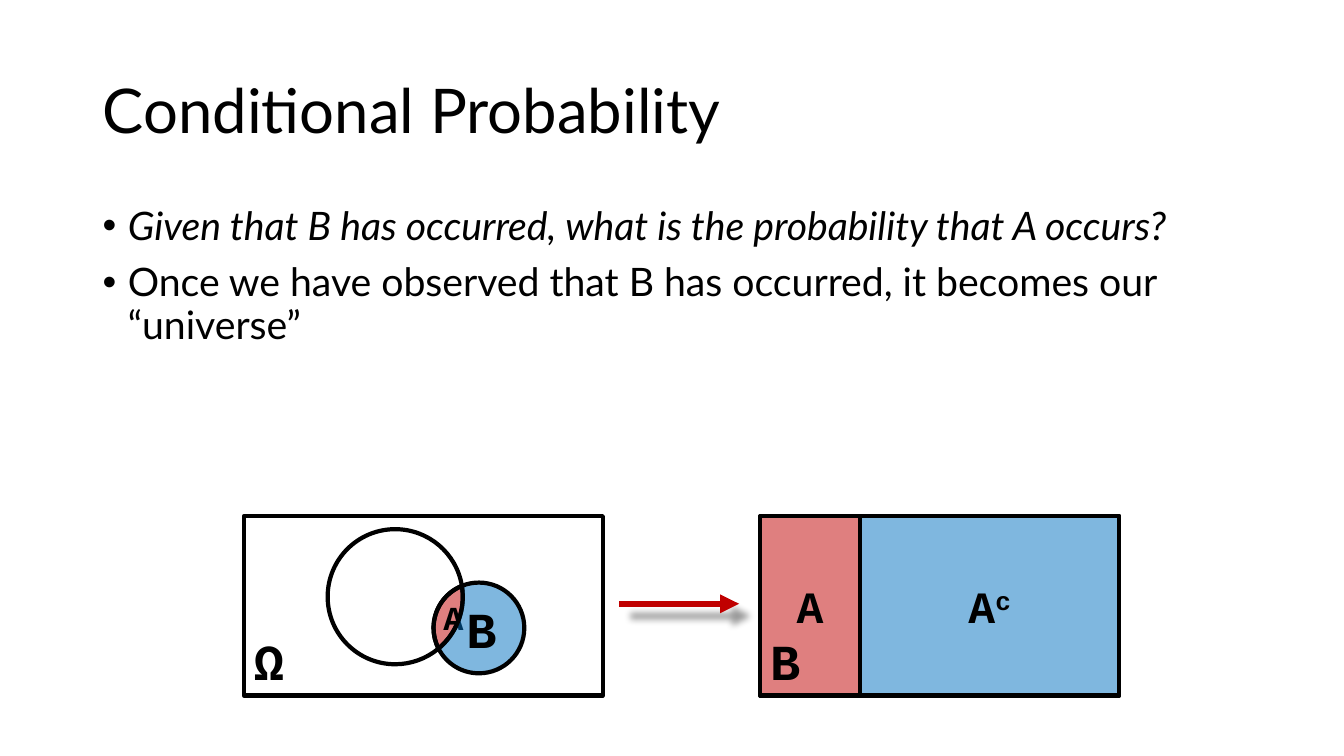
from math import acos, atan2, ceil, cos, floor, hypot, pi, sin, tan

from lxml import etree
from pptx import Presentation
from pptx.dml.color import RGBColor
from pptx.enum.shapes import MSO_CONNECTOR, MSO_SHAPE
from pptx.enum.text import MSO_ANCHOR, MSO_AUTO_SIZE, PP_ALIGN
from pptx.oxml.ns import qn
from pptx.util import Inches, Pt

BLACK = RGBColor(0x00, 0x00, 0x00)
RED = RGBColor(0xC0, 0x00, 0x00)
BLUE = RGBColor(0x00, 0x70, 0xC0)
RECTANGLE = MSO_SHAPE.RECTANGLE
STRAIGHT = MSO_CONNECTOR.STRAIGHT
MIDDLE, BOTTOM, TOP = MSO_ANCHOR.MIDDLE, MSO_ANCHOR.BOTTOM, MSO_ANCHOR.TOP
LEFT, CENTER = PP_ALIGN.LEFT, PP_ALIGN.CENTER
NO_AUTO_SIZE = MSO_AUTO_SIZE.NONE
TITLE_ONLY = 5

BOX_TOP, BOX_WIDTH, BOX_HEIGHT = 5.12, 3.56, 1.78
OMEGA_LEFT, UNIVERSE_LEFT, A_WIDTH = 2.42, 7.54, 0.99
CENTER_A, RADIUS_A = (3.92, 5.92), 0.67
CENTER_B, RADIUS_B = (4.75, 6.23), 0.45


def arc(center, radius, start, end):
    """Return Bezier points of an arc, split where it meets the axes."""
    quarter = pi / 2
    low, high = sorted((start, end))
    cuts = [quarter * k for k in range(floor(low / quarter) + 1, ceil(high / quarter))]
    angles = [low, *cuts, high]
    if start > end:
        angles.reverse()
    points = [(center[0] + radius * cos(start), center[1] + radius * sin(start))]
    for first, last in zip(angles, angles[1:]):
        pull = 4 / 3 * tan((last - first) / 4)
        for angle, shift in ((first, pull), (last, -pull), (last, 0)):
            points.append((center[0] + radius * (cos(angle) - shift * sin(angle)),
                           center[1] + radius * (sin(angle) + shift * cos(angle))))
    return points


def venn_regions():
    """Return the outlines of the overlap, A without B and B without A."""
    across, down = CENTER_B[0] - CENTER_A[0], CENTER_B[1] - CENTER_A[1]
    distance, direction = hypot(across, down), atan2(down, across)
    chord = (RADIUS_A**2 - RADIUS_B**2 + distance**2) / (2 * distance)
    half_a = acos(chord / RADIUS_A)
    half_b = acos((distance - chord) / RADIUS_B)
    upper_a, lower_a = direction - half_a, direction + half_a
    lower_b, upper_b = direction + pi - half_b, direction + pi + half_b
    inner_a = arc(CENTER_A, RADIUS_A, upper_a, lower_a)
    inner_b = arc(CENTER_B, RADIUS_B, lower_b, upper_b)
    outer_a = arc(CENTER_A, RADIUS_A, lower_a, upper_a + 2 * pi)
    outer_b = arc(CENTER_B, RADIUS_B, upper_b, lower_b + 2 * pi)
    return inner_a + inner_b[1:], outer_a + inner_b[-2::-1], outer_b + inner_a[-2::-1]


class SlideBuilder:
    """Hold the fonts and the current slide, and add its elements."""

    text_font = "Lato"
    symbol_font = "Courier New"

    def __init__(self, presentation):
        """Add a title-only slide."""
        self.slide = presentation.slides.add_slide(
            presentation.slide_layouts[TITLE_ONLY])

    def style_paragraph(self, paragraph, size, name, align=LEFT):
        """Set the font and alignment of a paragraph."""
        paragraph.alignment = align
        paragraph.font.name = name
        paragraph.font.size = Pt(size)
        paragraph.font.color.rgb = BLACK

    def title(self, text, left, top, width, height):
        """Place and format the title placeholder."""
        title = self.slide.shapes.title
        title.left, title.top = Inches(left), Inches(top)
        title.width, title.height = Inches(width), Inches(height)
        frame = title.text_frame
        frame.text = text
        frame.auto_size = NO_AUTO_SIZE
        frame.vertical_anchor = MIDDLE
        frame.paragraphs[0].line_spacing = 0.9
        self.style_paragraph(frame.paragraphs[0], 44, self.text_font)

    def bullets(self, items, left, top, width, height):
        """Add a bulleted list of (text, italic) items."""
        frame = self.slide.shapes.add_textbox(
            Inches(left), Inches(top), Inches(width), Inches(height)).text_frame
        frame.word_wrap = True
        frame.vertical_anchor = TOP
        for index, (text, italic) in enumerate(items):
            paragraph = frame.add_paragraph() if index else frame.paragraphs[0]
            paragraph.text = text
            paragraph.line_spacing = 0.9
            paragraph.space_before = Pt(10)
            self.style_paragraph(paragraph, 28, self.text_font)
            paragraph.font.italic = italic
            properties = paragraph._p.get_or_add_pPr()
            properties.set("marL", str(Inches(0.25)))
            properties.set("indent", str(-Inches(0.25)))
            default_font = properties.find(qn("a:defRPr"))
            default_font.addprevious(etree.Element(qn("a:buFont"), typeface="Arial"))
            default_font.addprevious(etree.Element(qn("a:buChar"), char="•"))

    def group(self):
        """Add an empty group and return its shapes."""
        return self.slide.shapes.add_group_shape().shapes

    def style_shape(self, shape, color):
        """Give a shape a black outline and a half-transparent or no fill."""
        shape.shadow.inherit = False
        shape.line.color.rgb = BLACK
        shape.line.width = Pt(3)
        if color is None:
            shape.fill.background()
            return
        shape.fill.solid()
        shape.fill.fore_color.rgb = color
        fill_color = shape._element.spPr.find(qn("a:solidFill"))[0]
        etree.SubElement(fill_color, qn("a:alpha"), val="50000")

    def label(self, shape, text, size, anchor=MIDDLE, align=CENTER, superscript=""):
        """Write a bold label, with an optional superscript, in a shape."""
        frame = shape.text_frame
        frame.word_wrap = True
        frame.vertical_anchor = anchor
        paragraph = frame.paragraphs[0]
        paragraph.text = text
        self.style_paragraph(paragraph, size, self.symbol_font, align)
        paragraph.font.bold = True
        if superscript:
            run = paragraph.add_run()
            run.text = superscript
            run._r.get_or_add_rPr().set("baseline", "30000")

    def box(self, shapes, left, width, color=None):
        """Add a rectangle in the diagram row."""
        shape = shapes.add_shape(RECTANGLE, Inches(left), Inches(BOX_TOP),
                                 Inches(width), Inches(BOX_HEIGHT))
        self.style_shape(shape, color)
        return shape

    def region(self, shapes, points, color=None):
        """Add a closed curved outline through Bezier points in inches."""
        corners = [(Inches(x), Inches(y)) for x, y in points]
        builder = shapes.build_freeform(*corners[0])
        builder.add_line_segments(corners[1:], close=True)
        shape = builder.convert_to_shape()
        lines = list(shape._element.iter(qn("a:lnTo")))
        for index in range(0, len(lines) - 2, 3):
            curve = etree.Element(qn("a:cubicBezTo"))
            lines[index].addprevious(curve)
            for line in lines[index:index + 3]:
                curve.append(line[0])
                line.getparent().remove(line)
        self.style_shape(shape, color)
        return shape

    def arrow(self, left, right, height):
        """Add a horizontal red arrow with a soft shadow."""
        connector = self.slide.shapes.add_connector(
            STRAIGHT, Inches(left), Inches(height), Inches(right), Inches(height))
        connector.line.color.rgb = RED
        connector.line.width = Pt(4.5)
        etree.SubElement(connector.line._get_or_add_ln(), qn("a:tailEnd"),
                         type="triangle")
        effects = etree.SubElement(connector._element.spPr, qn("a:effectLst"))
        shadow = etree.SubElement(
            effects, qn("a:outerShdw"), blurRad=str(Pt(5)), dist=str(Pt(12)),
            dir="2700000", rotWithShape="0")
        color = etree.SubElement(shadow, qn("a:srgbClr"), val=str(BLACK))
        etree.SubElement(color, qn("a:alpha"), val="40000")


def main():
    """Build the conditional probability slide."""
    presentation = Presentation()
    presentation.slide_width = Inches(13.33)
    presentation.slide_height = Inches(7.5)
    builder = SlideBuilder(presentation)
    builder.title("Conditional Probability", 0.92, 0.4, 11.5, 1.45)
    builder.bullets([
        ("Given that B has occurred, what is the probability that A occurs?", True),
        ("Once we have observed that B has occurred, it becomes our “universe”", False),
    ], 0.92, 2, 11.5, 4.76)

    venn = builder.group()
    overlap, only_a, only_b = venn_regions()
    builder.label(builder.box(venn, OMEGA_LEFT, BOX_WIDTH), "Ω", 36, BOTTOM, LEFT)
    builder.label(builder.region(venn, overlap, RED), "A", 24)
    builder.region(venn, only_a)
    builder.label(builder.region(venn, only_b, BLUE), "B", 36)

    universe = builder.group()
    builder.label(builder.box(universe, UNIVERSE_LEFT, A_WIDTH, RED), "A", 32)
    builder.label(builder.box(universe, UNIVERSE_LEFT, BOX_WIDTH), "B", 36, BOTTOM, LEFT)
    complement = builder.box(universe, UNIVERSE_LEFT + A_WIDTH, BOX_WIDTH - A_WIDTH, BLUE)
    builder.label(complement, "A", 32, superscript="c")
    builder.arrow(6.14, 7.33, 5.99)
    presentation.save("out.pptx")


if __name__ == "__main__":
    main()
